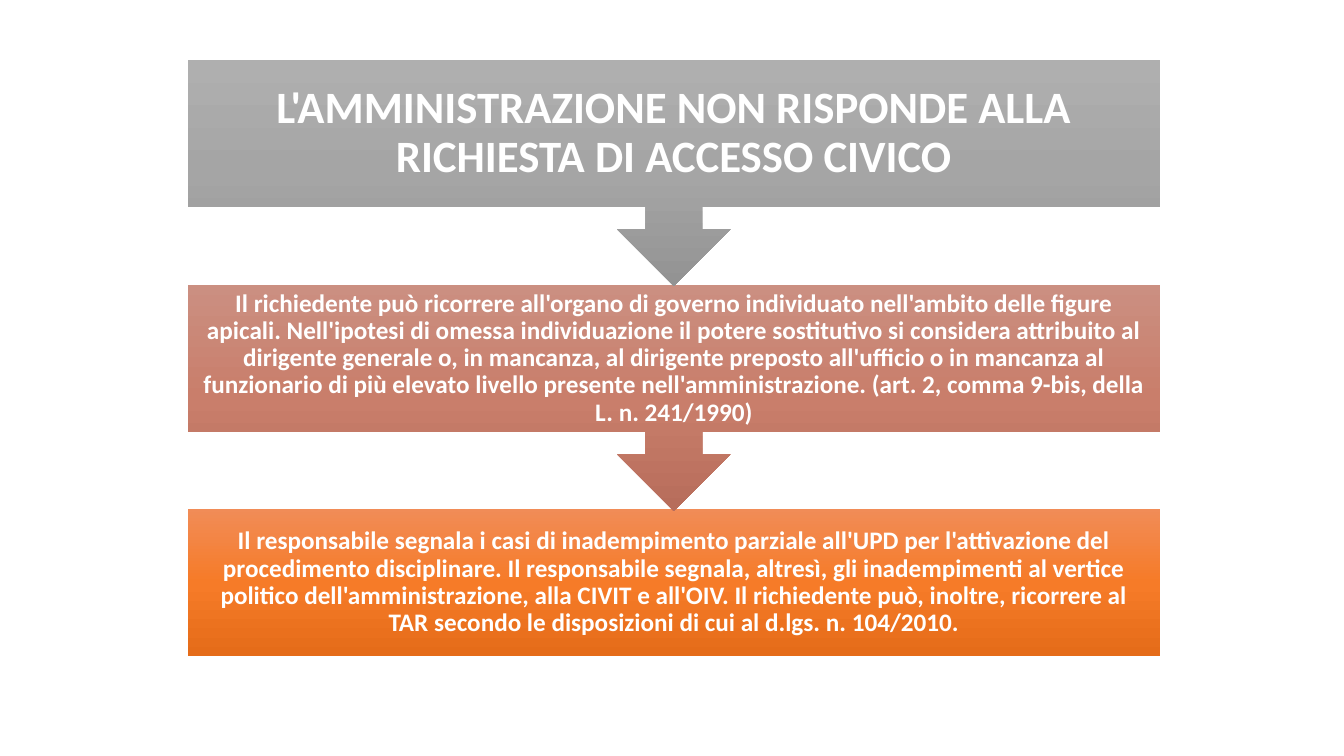
from copy import deepcopy

from pptx import Presentation
from pptx.dml.color import RGBColor
from pptx.enum.shapes import MSO_SHAPE
from pptx.enum.text import MSO_ANCHOR, PP_ALIGN
from pptx.oxml.ns import qn
from pptx.util import Emu, Pt


def px(length):
    return Emu(round(length * 914400 / 100.8))


def color(value):
    return RGBColor.from_string(value)


STEP_LEFT, STEP_WIDTH = 188, 972
BOX_HEIGHT, CALLOUT_HEIGHT = 147, 226

steps = [
    (509, MSO_SHAPE.RECTANGLE, BOX_HEIGHT, 14, 18, ["F18C57", "F67B28", "E56C19"],
     "Il responsabile segnala i casi di inadempimento parziale all'UPD per "
     "l'attivazione del procedimento disciplinare. Il responsabile segnala, "
     "altresì, gli inadempimenti al vertice politico dell'amministrazione, alla "
     "CIVIT e all'OIV. Il richiedente può, inoltre, ricorrere al TAR secondo le "
     "disposizioni di cui al d.lgs. n. 104/2010."),
    (285, MSO_SHAPE.DOWN_ARROW_CALLOUT, CALLOUT_HEIGHT, 14, 18, ["CB8F81", "C97E6B", "B76D5B"],
     "Il richiedente può ricorrere all'organo di governo individuato nell'ambito "
     "delle figure apicali. Nell'ipotesi di omessa individuazione il potere "
     "sostitutivo si considera attribuito al dirigente generale o, in mancanza, al "
     "dirigente preposto all'ufficio o in mancanza al funzionario di più elevato "
     "livello presente nell'amministrazione. (art. 2, comma 9-bis, della "
     "L. n. 241/1990)"),
    (60, MSO_SHAPE.DOWN_ARROW_CALLOUT, CALLOUT_HEIGHT, 25, 32, ["AFAFAF", "A5A5A5", "939393"],
     "L'AMMINISTRAZIONE NON RISPONDE ALLA RICHIESTA DI ACCESSO CIVICO"),
]

prs = Presentation()
prs.slide_width, prs.slide_height = px(1344), px(756)
slide = prs.slides.add_slide(prs.slide_layouts[6])

for top, outline, height, inset, size, shades, wording in steps:
    step = slide.shapes.add_shape(outline, px(STEP_LEFT), px(top), px(STEP_WIDTH), px(height))
    step.shadow.inherit = False
    step.line.fill.background()

    step.fill.gradient()
    step.fill.gradient_angle = 270
    stops = step._element.spPr.find(qn("a:gradFill")).find(qn("a:gsLst"))
    middle = deepcopy(stops[0])
    middle.set("pos", "50000")
    stops.insert(1, middle)
    for stop, shade in zip(step.fill.gradient_stops, shades):
        stop.color.rgb = color(shade)

    frame = step.text_frame
    frame.word_wrap = True
    frame.vertical_anchor = MSO_ANCHOR.MIDDLE
    frame.margin_left = frame.margin_right = px(inset)
    frame.margin_top = frame.margin_bottom = px(inset)
    paragraph = frame.paragraphs[0]
    paragraph.alignment = PP_ALIGN.CENTER
    paragraph.line_spacing = 0.9
    run = paragraph.add_run()
    run.text = wording
    run.font.name = "Calibri"
    run.font.size = Pt(size)
    run.font.bold = True
    run.font.color.rgb = color("FFFFFF")

prs.save("out.pptx")
